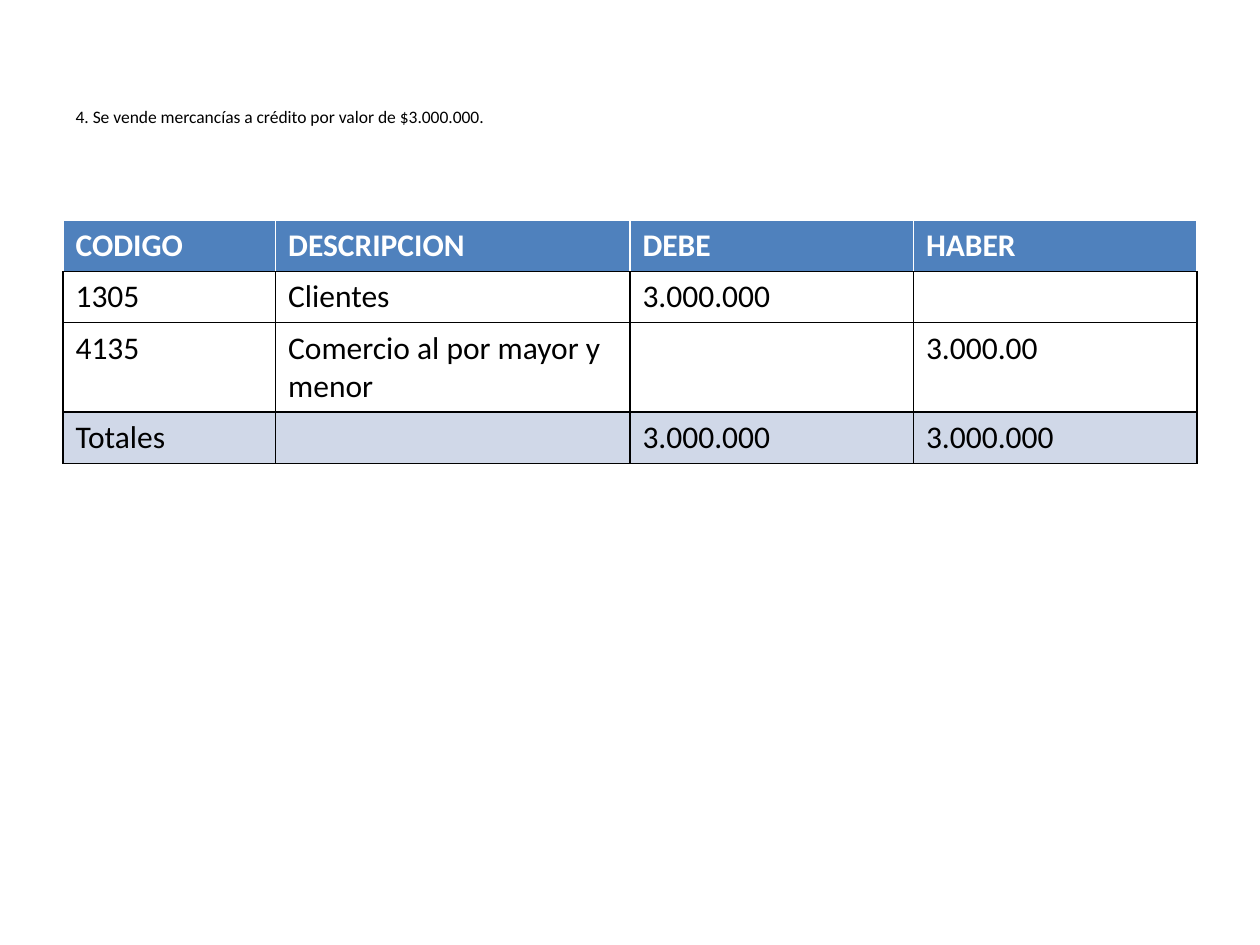
"""Build a slide with the journal entry for a sale of goods on credit."""
from lxml import etree
from pptx import Presentation
from pptx.dml.color import RGBColor
from pptx.enum.text import MSO_ANCHOR, PP_ALIGN
from pptx.oxml.ns import qn
from pptx.util import Pt

JUSTIFY = PP_ALIGN.JUSTIFY
MIDDLE = MSO_ANCHOR.MIDDLE
BLACK = RGBColor(0x00, 0x00, 0x00)
WHITE = RGBColor(0xFF, 0xFF, 0xFF)
HEADER_BLUE = RGBColor(0x4F, 0x81, 0xBD)
TOTAL_BLUE = RGBColor(0xD0, 0xD8, 0xE8)
FONT = "Calibri"

ENTRIES = [
    ["CODIGO", "DESCRIPCION", "DEBE", "HABER"],
    ["1305", "Clientes", "3.000.000", ""],
    ["4135", "Comercio al por mayor y menor", "", "3.000.00"],
    ["Totales", "", "3.000.000", "3.000.000"],
]
COLUMN_WIDTHS = [121.5, 202.5, 162, 162]
ROW_HEIGHTS = [29.2, 29.2, 50.6, 29.2]
HEADER_ROW, TOTAL_ROW = 0, len(ENTRIES) - 1


def set_font(para, size, color, bold=False):
    para.font.name = FONT
    para.font.size = Pt(size)
    para.font.bold = bold
    para.font.color.rgb = color


def add_borders(cell, colors):
    properties = cell._tc.get_or_add_tcPr()
    for position, (side, color) in enumerate(colors.items()):
        line = etree.Element(qn(f"a:{side}"), w=str(Pt(1)))
        fill = etree.SubElement(line, qn("a:solidFill"))
        etree.SubElement(fill, qn("a:srgbClr"), val=str(color))
        properties.insert(position, line)


deck = Presentation()
deck.slide_width, deck.slide_height = Pt(720), Pt(540)
page = deck.slides.add_slide(deck.slide_layouts[5])

title = page.shapes.title
title.left, title.top, title.width, title.height = Pt(36), Pt(21.6), Pt(648), Pt(90)
title.text_frame.text = "4. Se vende mercancías a crédito por valor de $3.000.000."
title.text_frame.vertical_anchor = MIDDLE
title_para = title.text_frame.paragraphs[0]
title_para.alignment = JUSTIFY
set_font(title_para, 10, BLACK)

table = page.shapes.add_table(
    len(ENTRIES), len(COLUMN_WIDTHS), Pt(36), Pt(126),
    Pt(sum(COLUMN_WIDTHS)), Pt(sum(ROW_HEIGHTS)),
).table
table.horz_banding = False
for column, width in zip(table.columns, COLUMN_WIDTHS):
    column.width = Pt(width)

for row_index, (row, height) in enumerate(zip(table.rows, ROW_HEIGHTS)):
    row.height = Pt(height)
    is_header = row_index == HEADER_ROW
    edge = WHITE if is_header else BLACK
    for cell, text in zip(row.cells, ENTRIES[row_index]):
        cell.text = text
        set_font(cell.text_frame.paragraphs[0], 18, edge, is_header)
        if row_index in (HEADER_ROW, TOTAL_ROW):
            cell.fill.solid()
            cell.fill.fore_color.rgb = HEADER_BLUE if is_header else TOTAL_BLUE
        else:
            cell.fill.background()
        add_borders(cell, {"lnL": edge, "lnR": edge, "lnT": edge, "lnB": BLACK})
        if row_index == HEADER_ROW + 1:
            cell._tc.tcPr.find(qn("a:lnT")).find(qn("a:solidFill"))[0].set("val", str(BLACK))

deck.save("out.pptx")
